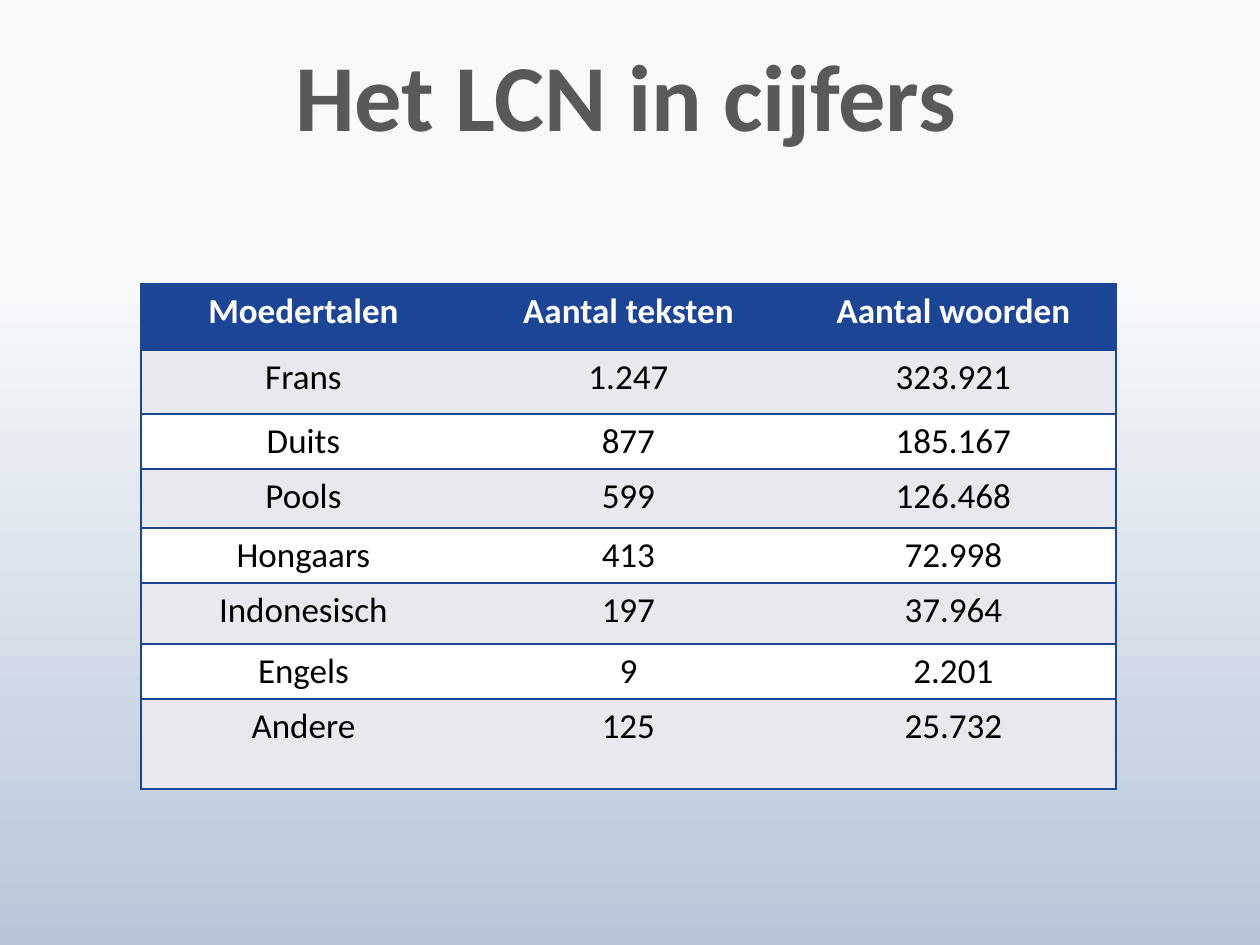
from dataclasses import dataclass

from lxml import etree
from pptx import Presentation, util as u
from pptx.dml import color, fill
from pptx.enum import text
from pptx.oxml import ns

PX_PER_INCH = 126
COLORS = {
    "sky": "F7F9FB", "haze": "B7C6D9",
    "title": "595959", "title_end": "262626",
    "blue": "1C4596", "band": "E8E9EF",
    "white": "FFFFFF", "black": "000000",
}
BORDER_PT = 1
COLUMN_WIDTH = 325
TABLE_LEFT, TABLE_TOP = 141, 284


@dataclass
class Row:
    height: int
    values: tuple[str, str, str]


ROWS = [
    Row(66, ("Moedertalen", "Aantal teksten", "Aantal woorden")),
    Row(64, ("Frans", "1.247", "323.921")),
    Row(55, ("Duits", "877", "185.167")),
    Row(59, ("Pools", "599", "126.468")),
    Row(55, ("Hongaars", "413", "72.998")),
    Row(61, ("Indonesisch", "197", "37.964")),
    Row(55, ("Engels", "9", "2.201")),
    Row(90, ("Andere", "125", "25.732")),
]


def px(n: int) -> u.Emu:
    return u.Emu(round(n * u.Inches(1) / PX_PER_INCH))


def rgb(name: str) -> color.RGBColor:
    return color.RGBColor.from_string(COLORS[name])


def set_gradient(target: fill.FillFormat, stops: list[tuple[float, str]]) -> None:
    """Fill from top to bottom with two colour stops."""
    target.gradient()
    target.gradient_angle = 270
    for stop, (position, name) in zip(target.gradient_stops, stops):
        stop.color.rgb = rgb(name)
        stop.position = position


def add_run(p, words: str, size: int, bold: bool):
    """Add centred text and return its run."""
    p.alignment = text.PP_ALIGN.CENTER
    r = p.add_run()
    r.text = words
    values = {"name": "Calibri", "size": u.Pt(size), "bold": bold}
    for key, value in values.items():
        setattr(r.font, key, value)
    return r


def set_borders(cell, sides: str) -> None:
    """Draw the named sides (L, R, T, B) and clear the others."""
    tc_pr = cell._tc.get_or_add_tcPr()
    for side in "LRTB":
        ln = etree.SubElement(tc_pr, ns.qn(f"a:ln{side}"), w=str(u.Pt(BORDER_PT)))
        if side in sides:
            solid = etree.SubElement(ln, ns.qn("a:solidFill"))
            etree.SubElement(solid, ns.qn("a:srgbClr"), val=COLORS["blue"])
        else:
            etree.SubElement(ln, ns.qn("a:noFill"))


def add_title(s, words: str) -> None:
    sp = s.shapes.add_textbox(px(66), px(14), px(1120), px(174))
    tf = sp.text_frame
    tf.word_wrap = True
    tf.vertical_anchor = text.MSO_ANCHOR.MIDDLE
    p = tf.paragraphs[0]
    p.line_spacing = u.Pt(56)
    r = add_run(p, words, 54, True)
    set_gradient(r.font.fill, [(0.5, "title"), (1, "title_end")])


def add_figures(s, rows: list[Row]) -> None:
    columns = len(rows[0].values)
    height = sum(row.height for row in rows)
    sp = s.shapes.add_table(len(rows), columns, px(TABLE_LEFT), px(TABLE_TOP),
                            px(columns * COLUMN_WIDTH), px(height))
    table = sp.table
    table.first_row = table.horz_banding = False
    for column in table.columns:
        column.width = px(COLUMN_WIDTH)
    for i, row in enumerate(rows):
        table.rows[i].height = px(row.height)
        header = i == 0
        background = "blue" if header else "band" if i % 2 else "white"
        for j, value in enumerate(row.values):
            cell = table.cell(i, j)
            sides = "TB" + ("L" if j == 0 else "") + ("R" if j == columns - 1 else "")
            set_borders(cell, sides)
            cell.fill.solid()
            cell.fill.fore_color.rgb = rgb(background)
            r = add_run(cell.text_frame.paragraphs[0], value, 20, header)
            r.font.color.rgb = rgb("white" if header else "black")


def main() -> None:
    prs = Presentation()
    prs.slide_width, prs.slide_height = px(1260), px(945)
    s = prs.slides.add_slide(prs.slide_layouts[6])

    # Background
    set_gradient(s.background.fill, [(0.3, "sky"), (1, "haze")])

    # Title and table
    add_title(s, "Het LCN in cijfers")
    add_figures(s, ROWS)

    prs.save("out.pptx")


if __name__ == "__main__":
    main()
